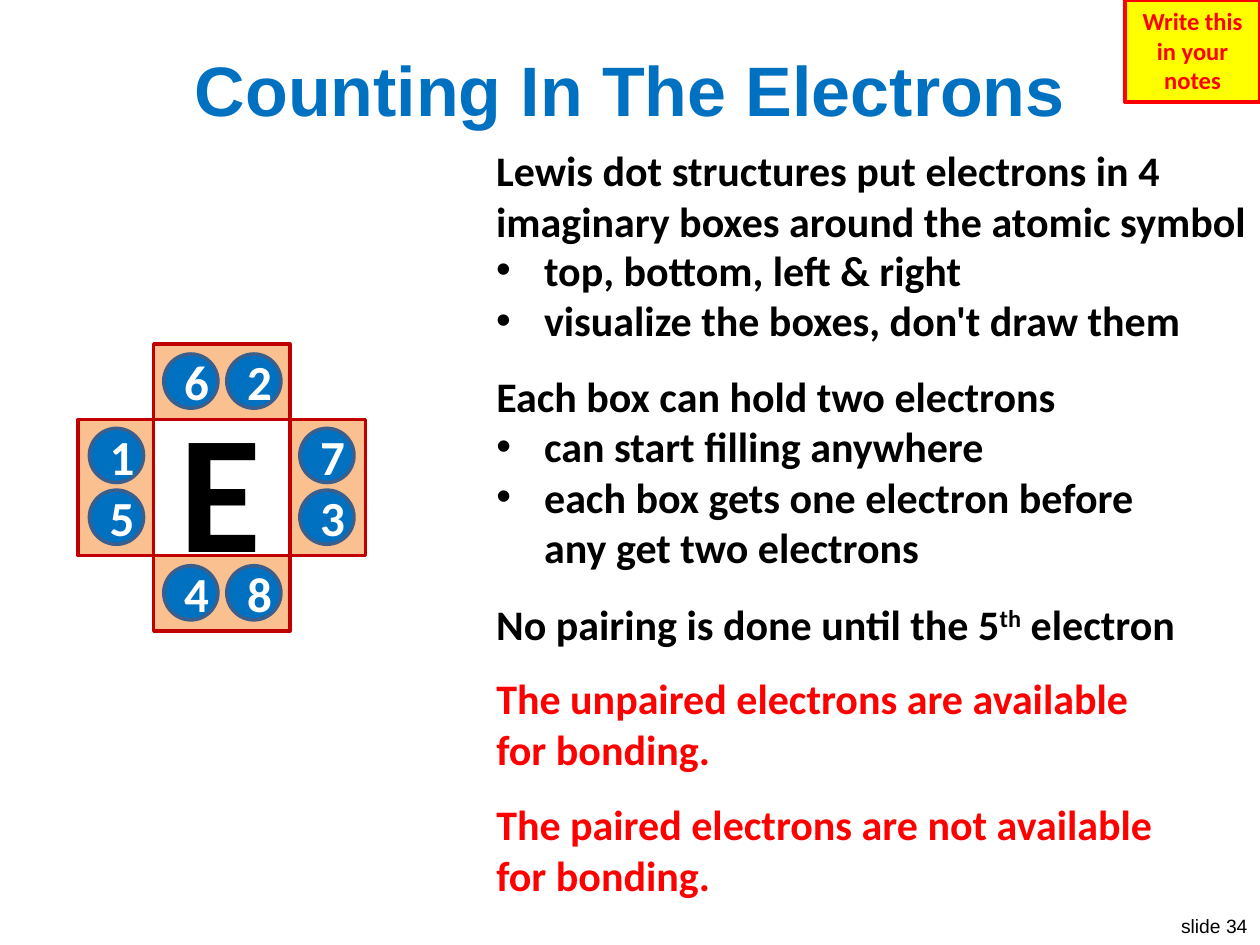
from lxml.etree import SubElement
from pptx import Presentation
from pptx.dml.color import RGBColor
from pptx.enum.shapes import MSO_SHAPE
from pptx.enum.text import MSO_ANCHOR, MSO_AUTO_SIZE, PP_ALIGN
from pptx.oxml.ns import qn
from pptx.util import Inches, Pt

COLS, ROWS = 100, 75
BLACK, WHITE, RED, BLUE = "000000", "FFFFFF", "FF0000", "0070C0"
LEFT, TOP, SIDE, DEPTH = 12.2, 33.3, 10.8, 6
DOT = 4.3


def grid(*cells):
    return [Inches(cell / 10) for cell in cells]


def tint(text):
    return RGBColor.from_string(text)


def add_run(para, text, size, color, font="Calibri", bold=True, lift=0):
    run = para.add_run()
    run.text = text
    run.font.name = font
    run.font.size = Pt(size)
    run.font.bold = bold
    run.font.color.rgb = tint(color)
    if lift:
        run.font._element.set("baseline", str(lift * 1000))


def add_form(shapes, kind, cells, fill, line, width=2):
    form = shapes.add_shape(kind, *grid(*cells))
    form.shadow.inherit = False
    if fill:
        form.fill.solid()
        form.fill.fore_color.rgb = tint(fill)
    else:
        form.fill.background()
    form.line.color.rgb = tint(line)
    form.line.width = Pt(width)
    return form


def add_box(slide, cells, wrap=True):
    frame = slide.shapes.add_textbox(*grid(*cells)).text_frame
    frame.word_wrap = wrap
    frame.auto_size = MSO_AUTO_SIZE.SHAPE_TO_FIT_TEXT
    return frame


def add_bullet(para):
    props = para._p.get_or_add_pPr()
    props.set("marL", str(Inches(0.38)))
    props.set("indent", str(-Inches(0.38)))
    SubElement(props, qn("a:buFont"), typeface="Arial")
    SubElement(props, qn("a:buChar"), char="•")


def add_note(slide, cells, head, points=(), color=BLACK):
    frame = add_box(slide, cells)
    lines = [(head, False)] if head else []
    lines += [(point, True) for point in points]
    for index, (text, dotted) in enumerate(lines):
        para = frame.add_paragraph() if index else frame.paragraphs[0]
        if dotted:
            add_bullet(para)
        add_run(para, text, 24, color)
    return frame.paragraphs[0]


def add_title(slide):
    title = slide.shapes.title
    title.left, title.top, title.width, title.height = grid(2, 3, 96, 8)
    frame = title.text_frame
    frame.auto_size = MSO_AUTO_SIZE.NONE
    frame.vertical_anchor = MSO_ANCHOR.MIDDLE
    para = frame.paragraphs[0]
    para.alignment = PP_ALIGN.CENTER
    add_run(para, "Counting In The Electrons", 40, BLUE, "Arial")


def add_cross(slide):
    group = slide.shapes.add_group_shape()
    right, base = LEFT + SIDE, TOP + SIDE
    sides = [
        (right, TOP, DEPTH, SIDE),
        (LEFT, base, SIDE, DEPTH),
        (LEFT - DEPTH, TOP, DEPTH, SIDE),
        (LEFT, TOP - DEPTH, SIDE, DEPTH),
    ]
    for cells in sides:
        add_form(group.shapes, MSO_SHAPE.RECTANGLE, cells, "FAC090", "C00000")
    core = (LEFT, TOP, SIDE, SIDE)
    add_form(group.shapes, MSO_SHAPE.RECTANGLE, core, None, "C00000")


def add_dot(slide, label, left, top):
    dot = add_form(slide.shapes, MSO_SHAPE.OVAL, (left, top, DOT, DOT), BLUE, "3A5F8C")
    frame = dot.text_frame
    frame.vertical_anchor = MSO_ANCHOR.MIDDLE
    para = frame.paragraphs[0]
    para.alignment = PP_ALIGN.CENTER
    add_run(para, label, 28, WHITE)


def add_dots(slide):
    for left, pair in ((7.1, "15"), (23.8, "73")):
        for label, top in zip(pair, (34, 38.9)):
            add_dot(slide, label, left, top)
    for top, pair in ((28.1, "62"), (44.9, "48")):
        for label, left in zip(pair, (13, 18)):
            add_dot(slide, label, left, top)


def add_symbol(slide):
    frame = add_box(slide, (14.2, 30.5, 6.6, 16.2), wrap=False)
    frame.margin_left = frame.margin_right = 0
    frame.margin_top = frame.margin_bottom = 0
    para = frame.paragraphs[0]
    para.alignment = PP_ALIGN.CENTER
    add_run(para, "E", 96, BLACK)


def add_badge(slide):
    cells = (89.3, 0, 10.7, 8.1)
    badge = add_form(slide.shapes, MSO_SHAPE.RECTANGLE, cells, "FFFF00", RED, 2.25)
    frame = badge.text_frame
    frame.word_wrap = True
    frame.vertical_anchor = MSO_ANCHOR.TOP
    frame.auto_size = MSO_AUTO_SIZE.SHAPE_TO_FIT_TEXT
    para = frame.paragraphs[0]
    para.alignment = PP_ALIGN.CENTER
    add_run(para, "Write this in your notes", 14, RED)


def add_notes(slide):
    left = 38.4
    add_note(slide, (left, 52.9, 55.2, 9.1),
             "The unpaired electrons are available for bonding.", color=RED)
    add_note(slide, (left, 62.9, 55.2, 9.1),
             "The paired electrons are not available for bonding.", color=RED)
    para = add_note(slide, (left, 47, 56.6, 5), "No pairing is done until the 5")
    add_run(para, "th", 24, BLACK, lift=30)
    add_run(para, " electron", 24, BLACK)
    add_note(slide, (left, 11, 61.6, 9.1),
             "Lewis dot structures put electrons in 4 imaginary boxes around the atomic symbol")
    add_note(slide, (left, 18.9, 57, 9), "",
             ("top, bottom, left & right", "visualize the boxes, don't draw them"))
    add_note(slide, (left, 28.9, 55.2, 17.2), "Each box can hold two electrons",
             ("can start filling anywhere",
              "each box gets one electron before any get two electrons"))


def add_count(slide):
    para = add_box(slide, (92.5, 72.1, 7.5, 2.9), wrap=False).paragraphs[0]
    para.alignment = PP_ALIGN.RIGHT
    add_run(para, "slide 34", 11, BLACK, "Arial", bold=False)


def main():
    deck = Presentation()
    deck.slide_width, deck.slide_height = grid(COLS, ROWS)
    slide = deck.slides.add_slide(deck.slide_layouts[5])
    add_count(slide)
    add_cross(slide)
    add_dots(slide)
    add_symbol(slide)
    add_badge(slide)
    add_title(slide)
    add_notes(slide)
    deck.save("out.pptx")


if __name__ == "__main__":
    main()
